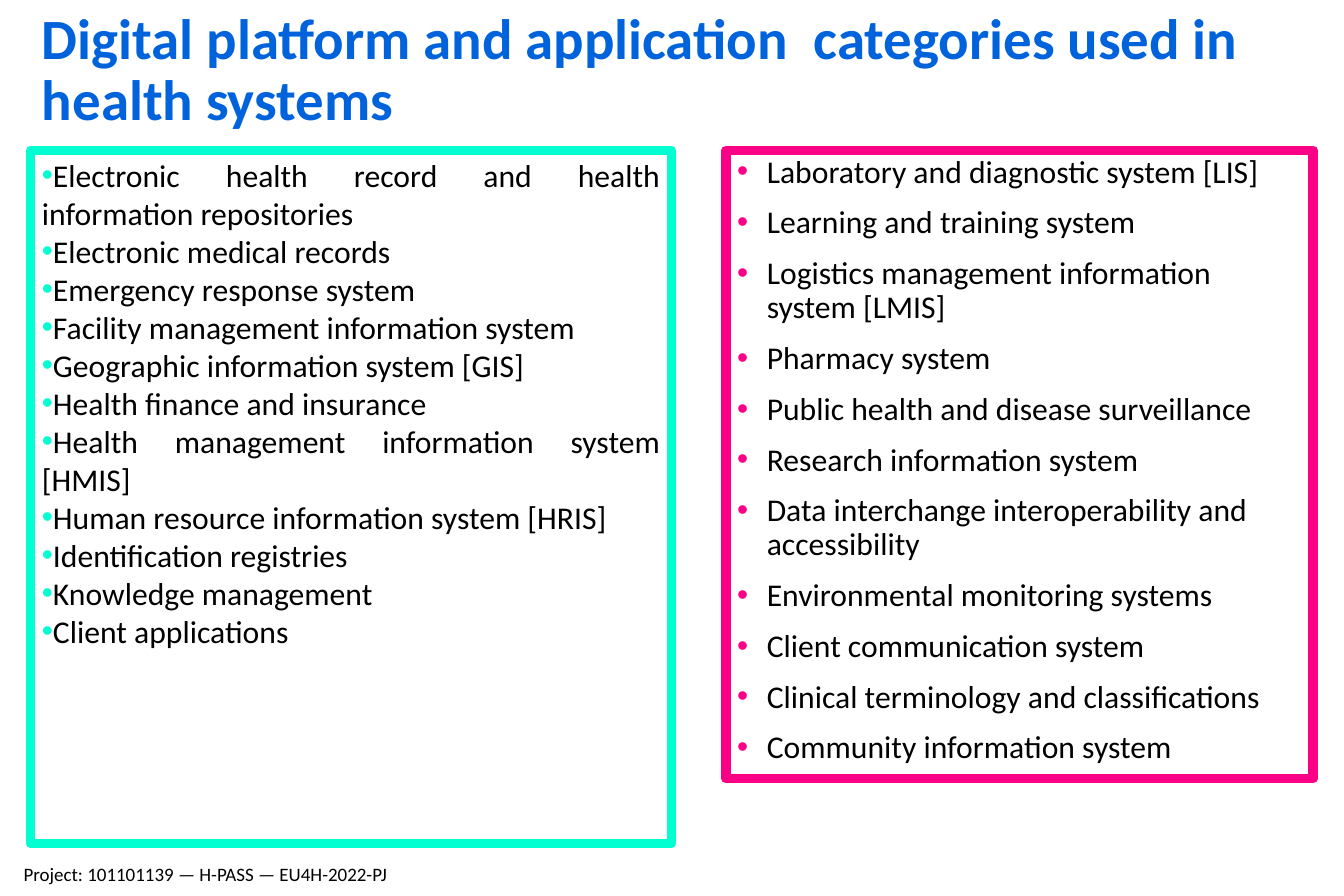
from lxml.etree import SubElement
from pptx import Presentation
from pptx.dml.color import RGBColor
from pptx.enum.shapes import MSO_SHAPE
from pptx.enum.text import MSO_ANCHOR, PP_ALIGN
from pptx.oxml.ns import qn
from pptx.util import Inches, Pt

BLUE = RGBColor(0x00, 0x63, 0xDC)
TURQUOISE = RGBColor(0x02, 0xFF, 0xD2)
PINK = RGBColor(0xFB, 0x00, 0x87)
BLACK = RGBColor(0x00, 0x00, 0x00)

PANEL_TOP = 1.32
BULLET_INDENT = 0.26

RECORD_CATEGORIES = [
    "Electronic health record and health information repositories",
    "Electronic medical records",
    "Emergency response system",
    "Facility management information system",
    "Geographic information system [GIS]",
    "Health finance and insurance",
    "Health management information system [HMIS]",
    "Human resource information system [HRIS]",
    "Identification registries",
    "Knowledge management",
    "Client applications",
]
SERVICE_CATEGORIES = [
    "Laboratory and diagnostic system [LIS]",
    "Learning and training system",
    "Logistics management information system [LMIS]",
    "Pharmacy system",
    "Public health and disease surveillance",
    "Research information system",
    "Data interchange interoperability and accessibility",
    "Environmental monitoring systems",
    "Client communication system",
    "Clinical terminology and classifications",
    "Community information system",
]


class SlideBuilder:
    font_name = "Calibri"

    def __init__(self, slide):
        self.slide = slide

    def style(self, paragraph, size, color, bold=False):
        font = paragraph.font
        font.name = self.font_name
        font.size = Pt(size)
        font.bold = bold
        font.color.rgb = color

    def bullet(self, paragraph, color, indent):
        properties = paragraph._p.get_or_add_pPr()
        properties.set("marL", str(Inches(indent)))
        properties.set("indent", str(-Inches(indent)))
        bullet_color = SubElement(properties, qn("a:buClr"))
        SubElement(bullet_color, qn("a:srgbClr"), val=str(color))
        SubElement(properties, qn("a:buFont"), typeface="Arial")
        SubElement(properties, qn("a:buChar"), char="•")

    def text(self, box, wording, size, color, bold=False, line_spacing=None,
             anchor=MSO_ANCHOR.TOP):
        frame = self.slide.shapes.add_textbox(*map(Inches, box)).text_frame
        frame.word_wrap = True
        frame.vertical_anchor = anchor
        paragraph = frame.paragraphs[0]
        paragraph.text = wording
        paragraph.line_spacing = line_spacing
        self.style(paragraph, size, color, bold)

    def bullet_panel(self, box, color, items, align, indent=0, gap=0,
                     line_spacing=None):
        panel = self.slide.shapes.add_shape(MSO_SHAPE.RECTANGLE,
                                            *map(Inches, box))
        panel.shadow.inherit = False
        panel.fill.background()
        panel.line.color.rgb = color
        panel.line.width = Pt(6)
        frame = panel.text_frame
        frame.word_wrap = True
        frame.vertical_anchor = MSO_ANCHOR.TOP
        for index, item in enumerate(items):
            paragraph = frame.add_paragraph() if index else frame.paragraphs[0]
            paragraph.text = item
            paragraph.alignment = align
            paragraph.line_spacing = line_spacing
            paragraph.space_before = Pt(gap if index else 0)
            self.bullet(paragraph, color, indent)
            self.style(paragraph, 20, BLACK)


def main():
    presentation = Presentation()
    presentation.slide_width = Inches(11.81)
    presentation.slide_height = Inches(7.87)
    builder = SlideBuilder(
        presentation.slides.add_slide(presentation.slide_layouts[6]))

    builder.text((0.27, 0.06, 11.27, 1.14),
                 "Digital platform and application  categories used in "
                 "health systems",
                 36, BLUE, bold=True, line_spacing=0.9,
                 anchor=MSO_ANCHOR.MIDDLE)
    builder.bullet_panel((0.27, PANEL_TOP, 5.63, 6.09), TURQUOISE,
                         RECORD_CATEGORIES, PP_ALIGN.JUSTIFY)
    builder.bullet_panel((6.38, PANEL_TOP, 5.16, 5.52), PINK,
                         SERVICE_CATEGORIES, PP_ALIGN.LEFT,
                         indent=BULLET_INDENT, gap=10.5, line_spacing=0.9)
    builder.text((0.11, 7.53, 3.63, 0.27),
                 "Project: 101101139 — H-PASS — EU4H-2022-PJ", 12, BLACK)

    presentation.save("out.pptx")


if __name__ == "__main__":
    main()
